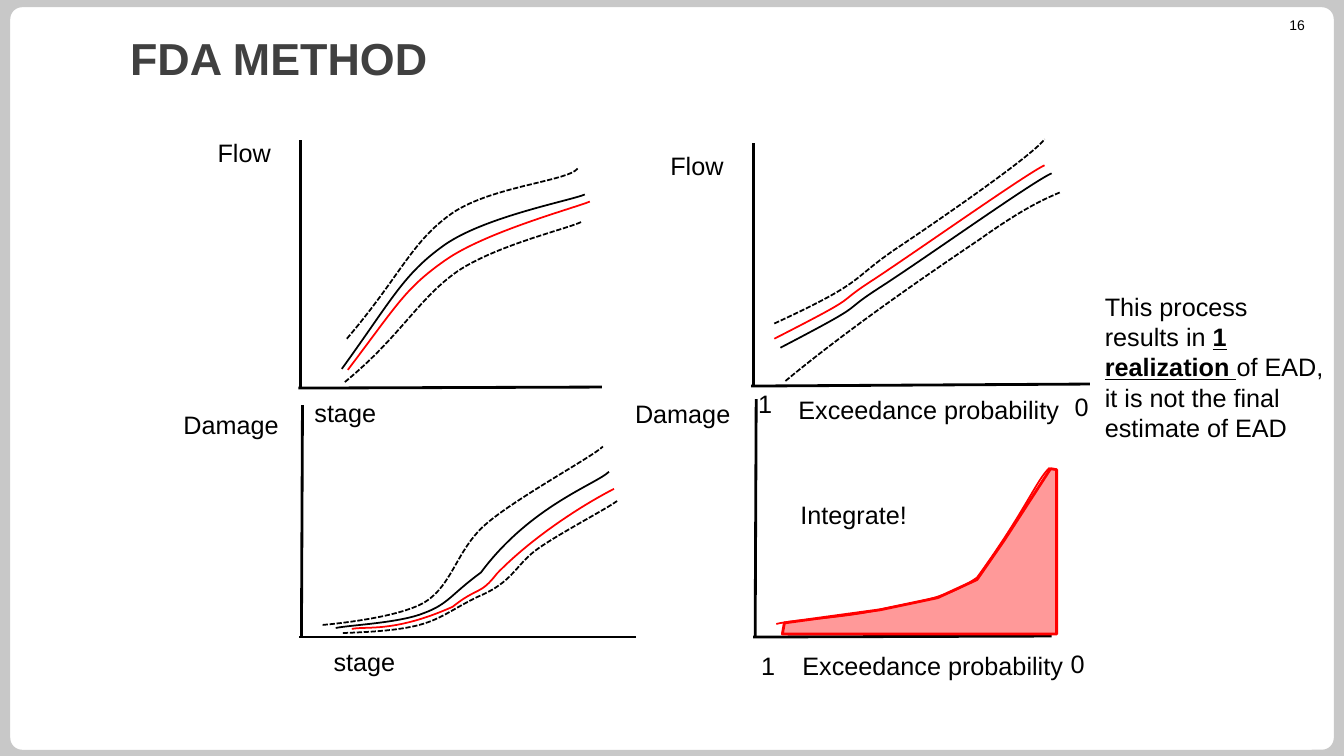
"""Build the FDA METHOD slide: four sketched curves leading to one EAD realization."""
from lxml import etree
from pptx import Presentation, dml, util as u
from pptx.dml import color
from pptx.enum import dml as lines, shapes, text
from pptx.oxml import ns

PX = 9144
BLACK, RED, GREY, WHITE = "000000", "FF0000", "C8C8C8", "FFFFFF"
paint = color.RGBColor.from_string


def write(para, words, size=18, ink=BLACK, bold=False, underline=False):
    span = para.add_run()
    span.text = words
    span.font.name = "Arial"
    span.font.size = u.Pt(size)
    span.font.color.rgb = paint(ink)
    span.font.bold = bold
    span.font.underline = underline


def add_box(left, top, width, height):
    box = page.shapes.add_textbox(left * PX, top * PX, width * PX, height * PX)
    box.text_frame.word_wrap = True
    return box.text_frame


deck = Presentation()
deck.slide_width, deck.slide_height = 1333 * PX, 750 * PX
page = deck.slides.add_slide(deck.slide_layouts[5])
page.background.fill.solid()
page.background.fill.fore_color.rgb = paint(GREY)

panel = page.shapes.add_shape(
    shapes.MSO_SHAPE.ROUNDED_RECTANGLE, 7 * PX, 4 * PX, 1319 * PX, 743 * PX)
panel.adjustments[0] = 0.02
panel.shadow.inherit = False
panel.fill.solid()
panel.fill.fore_color.rgb = paint(WHITE)
panel.line.color.rgb = paint(GREY)
panel.line.width = u.Pt(4.5)
page.shapes[0].element.addprevious(panel.element)

title = page.shapes.title
title.left, title.top, title.width, title.height = 119 * PX, 14 * PX, 1145 * PX, 86 * PX
title.text_frame.vertical_anchor = text.MSO_ANCHOR.MIDDLE
title.text_frame.paragraphs[0].alignment = text.PP_ALIGN.LEFT
write(title.text_frame.paragraphs[0], "FDA METHOD", size=32, ink="404040", bold=True)

number = add_box(1220, 16, 84, 17)
number.margin_top = number.margin_bottom = 0
number.paragraphs[0].alignment = text.PP_ALIGN.RIGHT
write(number.paragraphs[0], "16", size=10)

axes = [
    (747, 142, 747, 382), (1081, 381, 745, 383),
    (298, 139, 298, 384), (597, 384, 296, 385),
    (300, 402, 299, 631), (631, 632, 297, 632),
    (750, 396, 749, 631), (1043, 631, 747, 632),
]
for ends in axes:
    axis = page.shapes.add_connector(
        shapes.MSO_CONNECTOR.STRAIGHT, *(end * PX for end in ends))
    axis.line.color.rgb = paint(BLACK)
    axis.line.width = u.Pt(2)
    etree.SubElement(axis.element.spPr, ns.qn("a:effectLst"))

curves = [
    (BLACK, True, [(768, 321), (859, 279), (842, 279), (887, 248),
                   (932, 218), (1026, 153), (1036, 138)]),
    (BLACK, True, [(779, 378), (843, 325), (925, 269), (971, 238),
                   (1016, 206), (1035, 198), (1051, 191)]),
    (BLACK, False, [(774, 345), (868, 296), (828, 314), (873, 285),
                    (918, 256), (1026, 179), (1043, 172)]),
    (BLACK, True, [(344, 336), (396, 275), (407, 242), (445, 214),
                   (483, 185), (564, 180), (573, 167)]),
    (BLACK, True, [(342, 379), (397, 334), (415, 296), (454, 269),
                   (493, 243), (563, 227), (577, 220)]),
    (BLACK, False, [(339, 366), (389, 297), (400, 272), (441, 243),
                    (481, 215), (566, 199), (580, 193)]),
    (BLACK, True, [(320, 620), (320, 620), (395, 614), (422, 597), (449, 580),
                   (453, 545), (482, 520), (512, 494), (588, 453), (598, 443)]),
    (BLACK, True, [(340, 628), (433, 625), (429, 614), (474, 592), (510, 577),
                   (511, 560), (534, 544), (557, 528), (603, 504), (612, 497)]),
    (BLACK, False, [(333, 623), (348, 620), (397, 618), (421, 608), (445, 599),
                    (447, 590), (477, 568), (526, 502), (592, 480), (604, 468)]),
    (RED, False, [(770, 619), (784, 615), (838, 613), (871, 605), (904, 598),
                  (938, 595), (969, 573), (1017, 507), (1028, 476), (1041, 464)]),
    (RED, False, [(768, 336), (862, 288), (822, 306), (867, 277),
                  (911, 248), (1020, 171), (1036, 164)]),
    (RED, False, [(345, 367), (395, 301), (402, 286), (442, 258),
                  (482, 230), (571, 206), (585, 200)]),
    (RED, False, [(349, 624), (363, 621), (391, 628), (449, 602), (474, 582),
                  (476, 591), (493, 569), (526, 535), (574, 503), (609, 485)]),
]
for ink, dashed, points in curves:
    builder = page.shapes.build_freeform(*points[0], scale=PX)
    builder.add_line_segments(points[1:], close=False)
    curve = builder.convert_to_shape()
    curve.shadow.inherit = False
    curve.fill.background()
    curve.line.color.rgb = paint(ink)
    curve.line.width = u.Pt(1.25)
    if dashed:
        curve.line.dash_style = lines.MSO_LINE.SQUARE_DOT
    steps = list(curve.element.iter(ns.qn("a:lnTo")))
    for first, second, third in zip(steps[::3], steps[1::3], steps[2::3]):
        first.tag = ns.qn("a:cubicBezTo")
        for step in (second, third):
            first.append(step[0])
            step.getparent().remove(step)

labels = [
    ("1", 742, 380, 45), ("0", 1056, 383, 35), ("Exceedance probability", 782, 386, 289),
    ("1", 745, 640, 45), ("0", 1052, 638, 35), ("Exceedance probability", 786, 640, 289),
    ("stage", 321, 636, 289), ("stage", 302, 389, 289),
    ("Damage", 172, 401, 289), ("Damage", 620, 390, 289),
    ("Flow", 206, 131, 289), ("Flow", 655, 144, 289), ("Integrate!", 784, 490, 289),
]
for words, left, top, width in labels:
    write(add_box(left, top, width, 40).paragraphs[0], words)

builder = page.shapes.build_freeform(778, 618, scale=PX)
builder.add_line_segments([(776, 629), (1048, 629), (1048, 466), (1042, 465), (996, 536),
                           (969, 575), (930, 593), (873, 605)], close=True)
area = builder.convert_to_shape()
area.shadow.inherit = False
area.fill.solid()
area.fill.fore_color.rgb = paint(RED)
fill_color = area.element.spPr.find(ns.qn("a:solidFill"))[0]
etree.SubElement(fill_color, ns.qn("a:alpha"), val="40000")
area.line.color.rgb = paint(RED)
area.line.width = u.Pt(2)

note = add_box(1086, 284, 237, 192).paragraphs[0]
write(note, "This process results in ")
write(note, "1 realization ", bold=True, underline=True)
write(note, "of EAD, it is not the final estimate of EAD")

deck.save("out.pptx")
